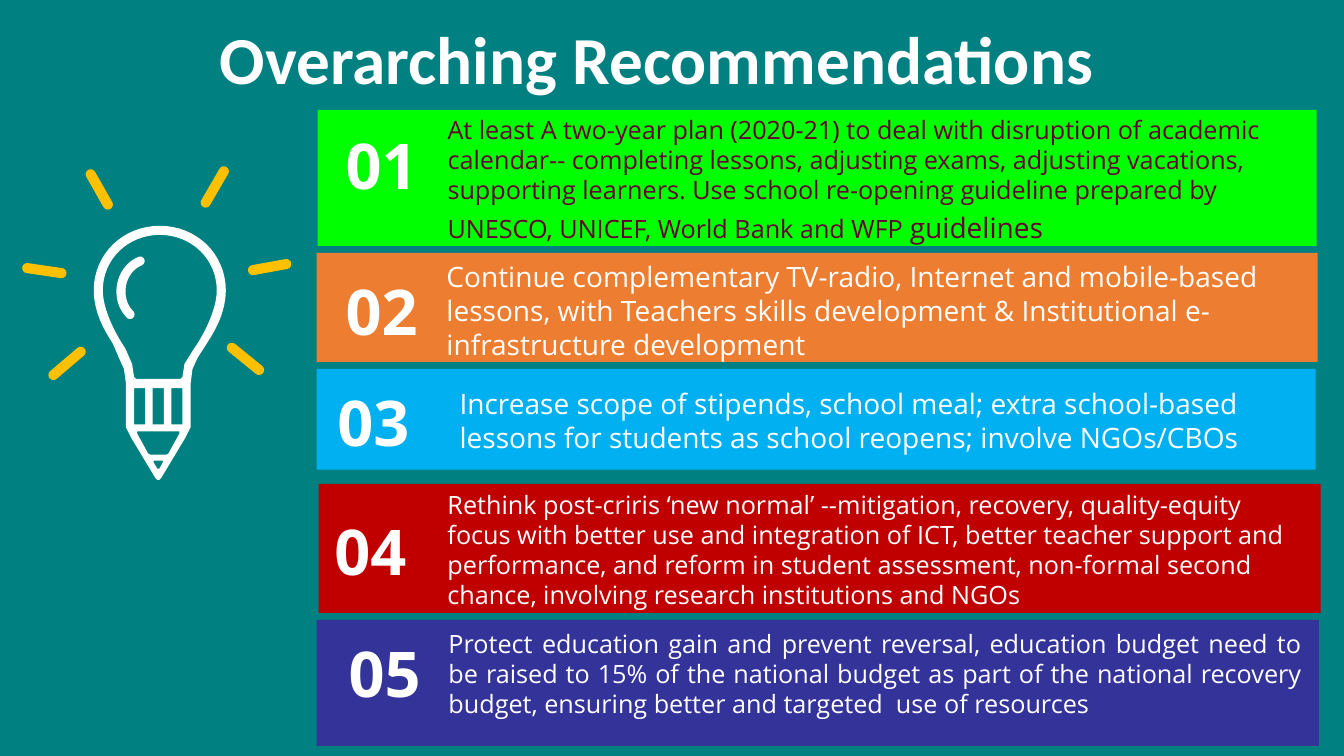
from math import atan2, cos, pi, sin

from pptx import Presentation
from pptx.dml.color import RGBColor
from pptx.enum.shapes import MSO_SHAPE
from pptx.enum.text import MSO_AUTO_SIZE, PP_ALIGN
from pptx.util import Inches, Pt

TEAL = RGBColor(0x00, 0x80, 0x80)
WHITE = RGBColor(0xFF, 0xFF, 0xFF)
AMBER = RGBColor(0xFF, 0xC0, 0x00)
GREEN = RGBColor(0x00, 0xFF, 0x00)
ORANGE = RGBColor(0xED, 0x7D, 0x31)
SKY = RGBColor(0x00, 0xB0, 0xF0)
RED = RGBColor(0xC0, 0x00, 0x00)
INDIGO = RGBColor(0x33, 0x33, 0x99)
MAROON = RGBColor(0x66, 0x00, 0x33)


def curve(start, first, second, end, steps=16):
    """Points along a cubic curve, without its start."""
    points = []
    for step in range(1, steps + 1):
        t = step / steps
        weights = ((1 - t) ** 3, 3 * t * (1 - t) ** 2, 3 * t * t * (1 - t), t ** 3)
        points.append(tuple(
            sum(w * p[axis] for w, p in zip(weights, (start, first, second, end)))
            for axis in (0, 1)))
    return points


def mirrored(left_side):
    """Close a left half with its reflection; the foot sits left of the globe."""
    def reflect(x, y):
        return 2 * (1.585 if y < 3.5 else 1.57) - x, y
    return left_side + [reflect(x, y) for x, y in reversed(left_side)]


def round_stroke(line, radius=0.05, steps=8):
    """Outline of a thick line with round ends."""
    outline = []
    for side in (line, line[::-1]):
        for index, (x, y) in enumerate(side):
            before, after = side[max(index - 1, 0)], side[min(index + 1, len(side) - 1)]
            heading = atan2(after[1] - before[1], after[0] - before[0])
            turns = range(steps + 1) if index == len(side) - 1 else (0,)
            for turn in turns:
                angle = heading - pi / 2 + pi * turn / steps
                outline.append((x + radius * cos(angle), y + radius * sin(angle)))
    return outline


class SlideBuilder:
    """Style and current slide, with one method per kind of element."""
    body_font = "Open Sans"

    def __init__(self, page):
        self.page = page
        page.background.fill.solid()
        page.background.fill.fore_color.rgb = TEAL

    def paint(self, shape, color):
        shape.shadow.inherit = False
        shape.fill.solid()
        shape.fill.fore_color.rgb = color
        shape.line.fill.background()

    def bar(self, place, color):
        lengths = [Inches(n) for n in place]
        self.paint(self.page.shapes.add_shape(MSO_SHAPE.RECTANGLE, *lengths), color)

    def outline(self, contours, color):
        pen = None
        for contour in contours:
            start, *others = [(Inches(x), Inches(y)) for x, y in contour]
            if pen is None:
                pen = self.page.shapes.build_freeform(*start)
            else:
                pen.move_to(*start)
            pen.add_line_segments(others, close=True)
        self.paint(pen.convert_to_shape(), color)

    def text(self, place, spans, color=WHITE, align=PP_ALIGN.LEFT, **format_values):
        box = self.page.shapes.add_textbox(*[Inches(n) for n in place])
        box.text_frame.word_wrap = True
        box.text_frame.auto_size = MSO_AUTO_SIZE.SHAPE_TO_FIT_TEXT
        para = box.text_frame.paragraphs[0]
        para.alignment = align
        for words, size in spans:
            span = para.add_run()
            span.text = words
            span.font.color.rgb = color
            values = {"name": self.body_font, "size": Pt(size), **format_values}
            for key, value in values.items():
                setattr(span.font, key, value)


# Each entry: bar place and colour, number place and label, text place, spans, style
RECOMMENDATIONS = [
    ((3.15, 1.09, 9.91, 1.35), GREEN, (3.14, 1.21), "01", (4.34, 1.08, 8.69, 1.41),
     [("At least A two-year plan (2020-21) to deal with disruption of academic "
       "calendar-- completing lessons, adjusting exams, adjusting vacations, "
       "supporting learners. Use school re-opening guideline prepared by "
       "UNESCO, UNICEF, World Bank and WFP ", 18), ("guidelines ", 20), (" ", 24)],
     {"color": MAROON}),
    ((3.14, 2.51, 9.93, 1.08), ORANGE, (3.14, 2.65), "02", (4.33, 2.53, 8.75, 1.11),
     [("Continue complementary TV-radio, Internet and mobile-based  lessons, with "
       "Teachers skills development & Institutional e-infrastructure development", 20)],
     {}),
    ((3.14, 3.66, 9.91, 1), SKY, (3.14, 3.76), "03 ", (4.46, 3.79, 8.75, 0.77),
     [("Increase scope of stipends, school meal; extra school-based lessons for "
       "students as school reopens; involve NGOs/CBOs", 20)], {}),
    ((3.16, 4.8, 9.94, 1.28), RED, (3.11, 5.04), "04 ", (4.34, 4.8, 8.67, 1.31),
     [("Rethink post-criris ‘new normal’ --mitigation, recovery, quality-equity focus "
       "with better use and integration of ICT, better teacher support and "
       "performance, and reform in student assessment, non-formal second chance, "
       "involving research institutions and NGOs", 18)], {}),
    ((3.14, 6.15, 9.94, 1.25), INDIGO, (3.17, 6.25), "05", (4.35, 6.18, 8.66, 1.01),
     [("Protect education gain and prevent reversal, education budget need to be "
       "raised to 15% of the national budget as part of the national recovery "
       "budget, ensuring better and targeted  use of resources", 18)],
     {"align": PP_ALIGN.JUSTIFY}),
]

RAYS = [
    [(0.53, 3.72), (0.8, 3.49)], [(0.27, 2.66), (0.61, 2.71)],
    [(0.9, 1.73), (1.07, 2.03)], [(2.22, 1.7), (2.04, 2.01)],
    [(2.84, 2.62), (2.51, 2.68)], [(2.57, 3.67), (2.3, 3.45)],
]


def draw_bulb(builder):
    body = mirrored(
        [(1.585, 2.24)]
        + curve((1.585, 2.24), (1.22, 2.24), (0.93, 2.52), (0.93, 2.88))
        + curve((0.93, 2.88), (0.93, 3.15), (1.1, 3.37), (1.12, 3.41))
        + [(1.18, 3.55), (1.23, 3.66), (1.25, 3.81), (1.25, 4.24), (1.3, 4.34),
           (1.45, 4.59), (1.54, 4.74), (1.56, 4.76)])
    globe = mirrored(
        [(1.585, 2.33)]
        + curve((1.585, 2.33), (1.27, 2.33), (1.02, 2.57), (1.02, 2.88))
        + curve((1.02, 2.88), (1.02, 3.13), (1.23, 3.44), (1.24, 3.45))
        + [(1.31, 3.61), (1.33, 3.74), (1.35, 3.76)])
    slots = [[(x, 3.85), (x + 0.11, 3.85), (x + 0.11, 4.21), (x, 4.21)]
             for x in (1.33 + 0.185 * index for index in range(3))]
    wood = mirrored([(1.36, 4.28), (1.36, 4.3), (1.47, 4.5), (1.49, 4.51)])
    lead = mirrored([(1.53, 4.57), (1.52, 4.58), (1.56, 4.65)])
    builder.outline([body, globe, *slots, wood, lead], WHITE)

    # Glint and rays
    glint = [(1.39, 2.59)] + curve((1.39, 2.59), (1.18, 2.68), (1.14, 2.97), (1.29, 3.12))
    builder.outline([round_stroke(glint, 0.045)], WHITE)
    for ray in RAYS:
        builder.outline([round_stroke(ray)], AMBER)


def main():
    deck = Presentation()
    deck.slide_width, deck.slide_height = Inches(13.33), Inches(7.5)
    builder = SlideBuilder(deck.slides.add_slide(deck.slide_layouts[6]))

    # Title
    builder.text((1.3, 0.12, 10.58, 0.94), [("Overarching Recommendations ", 48)],
                 align=PP_ALIGN.CENTER, name="Calibri", bold=True)

    # Numbered bars
    for bar, color, corner, number, place, spans, style in RECOMMENDATIONS:
        builder.bar(bar, color)
        builder.text((*corner, 1.29, 0.86), [(number, 45)],
                     align=PP_ALIGN.CENTER, bold=True)
        builder.text(place, spans, **style)

    # Light bulb
    draw_bulb(builder)
    deck.save("out.pptx")


if __name__ == "__main__":
    main()
